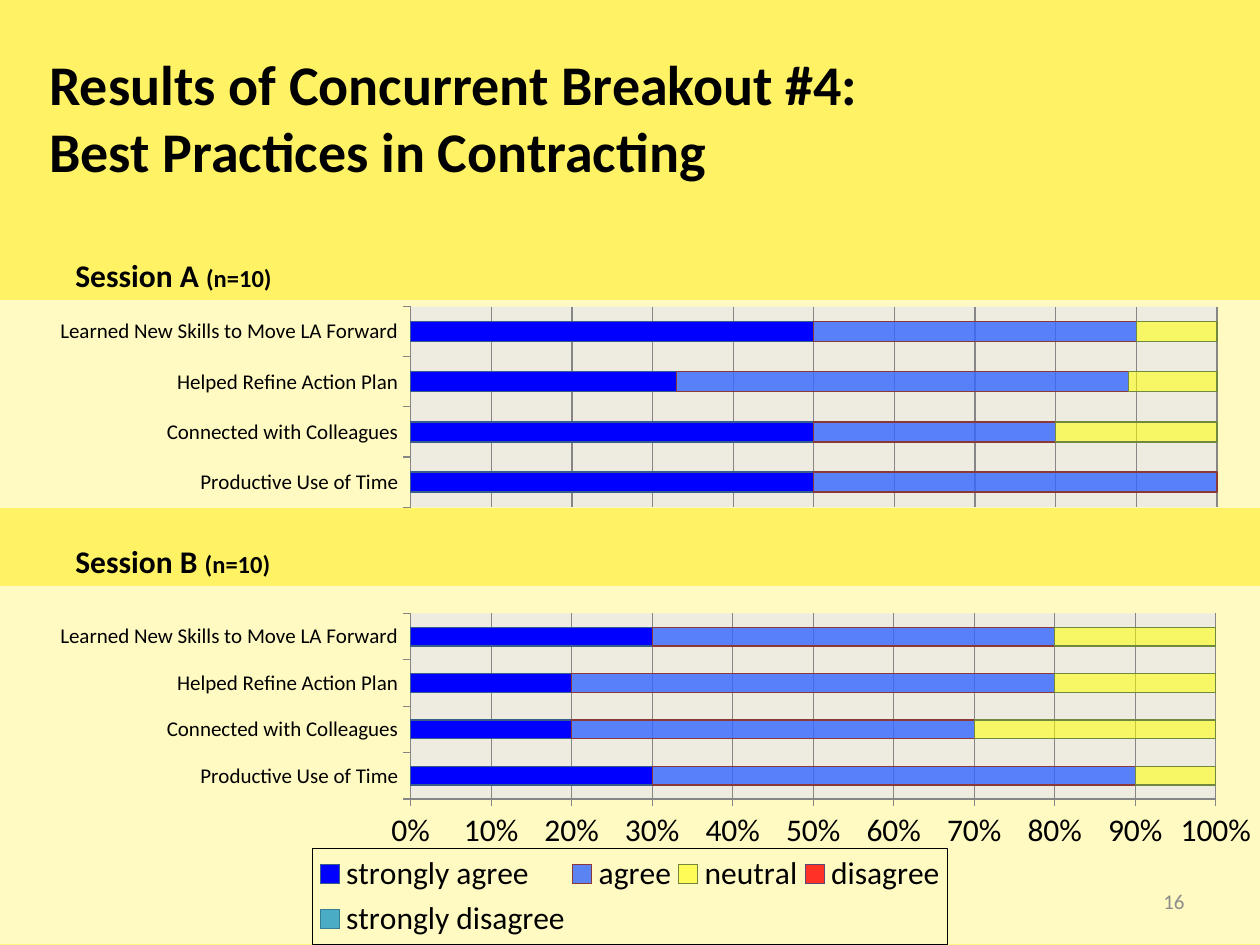
from dataclasses import dataclass

from lxml.etree import SubElement
from pptx import Presentation
from pptx.chart.chart import Chart
from pptx.chart.data import CategoryChartData
from pptx.dml.color import RGBColor
from pptx.enum.chart import XL_CHART_TYPE, XL_LEGEND_POSITION, XL_TICK_MARK
from pptx.enum.text import MSO_ANCHOR, PP_ALIGN
from pptx.oxml import parse_xml
from pptx.oxml.ns import nsdecls, qn
from pptx.util import Cm, Pt

FONT = "Calibri"
COLORS = {
    "background": "FFF365",
    "chart": "FFFAC1",
    "plot": "EEECE1",
    "text": "000000",
    "axis": "868686",
    "page number": "8C8C8C",
}
CATEGORIES = [
    "Productive Use of Time",
    "Connected with Colleagues",
    "Helped Refine Action Plan",
    "Learned New Skills to Move LA Forward",
]


@dataclass
class Box:
    left: float
    top: float
    width: float
    height: float

    def lengths(self) -> list:
        return [Cm(value) for value in (self.left, self.top, self.width, self.height)]


@dataclass
class Answer:
    name: str
    fill: str
    outline: str
    opacity: int = 100


@dataclass
class Session:
    label: str
    label_box: Box
    chart_box: Box
    plot_area: Box  # fractions of the chart
    values: list  # one row per answer
    shows_scale: bool


ANSWERS = [
    Answer("strongly agree", "0000FF", "385D8A"),
    Answer("agree", "3366FF", "8C3836", 80),
    Answer("neutral", "FFFF00", "71893F", 55),
    Answer("disagree", "FF0000", "5C4776", 80),
    Answer("strongly disagree", "4BACC6", "357D91"),
]
NONE = [0, 0, 0, 0]
SESSIONS = [
    Session("Session A ", Box(1.27, 5.03, 7.2, 1.02), Box(0, 6.05, 25.4, 4.19),
            Box(0.326, 0.031, 0.64, 0.966),
            [[50, 50, 33, 50], [50, 30, 56, 40], [0, 20, 11, 10], NONE, NONE], False),
    Session("Session B ", Box(1.27, 10.8, 7.2, 1.02), Box(0, 11.81, 25.4, 7.24),
            Box(0.326, 0.077, 0.639, 0.518),
            [[30, 20, 20, 30], [60, 50, 60, 50], [10, 30, 20, 20], NONE, NONE], True),
]


def color(name: str) -> RGBColor:
    return RGBColor.from_string(COLORS[name])


def add_run(paragraph, text: str, size: float, bold: bool = False, color_name: str = "text") -> None:
    run = paragraph.add_run()
    run.text = text
    run.font.name = FONT
    run.font.size = Pt(size)
    run.font.bold = bold
    run.font.color.rgb = color(color_name)


def add_text_box(slide, box: Box):
    frame = slide.shapes.add_textbox(*box.lengths()).text_frame
    frame.word_wrap = True
    return frame


def area_format(fill: str, line: str = ""):
    outline = f'<a:solidFill><a:srgbClr val="{line}"/></a:solidFill>' if line else "<a:noFill/>"
    return parse_xml(
        f'<c:spPr {nsdecls("c", "a")}><a:solidFill><a:srgbClr val="{fill}"/></a:solidFill>'
        f'<a:ln w="9525">{outline}</a:ln></c:spPr>')


def manual_layout(box: Box, inner: bool = False):
    target = '<c:layoutTarget val="inner"/>' if inner else ""
    return parse_xml(
        f'<c:layout {nsdecls("c")}><c:manualLayout>{target}'
        '<c:xMode val="edge"/><c:yMode val="edge"/>'
        f'<c:x val="{box.left}"/><c:y val="{box.top}"/>'
        f'<c:w val="{box.width}"/><c:h val="{box.height}"/></c:manualLayout></c:layout>')


def format_areas(chart: Chart, plot_area: Box) -> None:
    chart_element = chart.element.find(qn("c:chart"))
    chart_element.addnext(area_format(COLORS["chart"]))
    plot_element = chart_element.find(qn("c:plotArea"))
    for layout in plot_element.findall(qn("c:layout")):
        plot_element.remove(layout)
    plot_element.insert(0, manual_layout(plot_area, inner=True))
    plot_element.append(area_format(COLORS["plot"]))


def format_series(chart: Chart) -> None:
    plot = chart.plots[0]
    plot.gap_width = 150
    plot.overlap = 100
    plot.vary_by_categories = False
    for series, answer in zip(plot.series, ANSWERS):
        series.invert_if_negative = False
        series.format.fill.solid()
        series.format.fill.fore_color.rgb = RGBColor.from_string(answer.fill)
        series.format.line.color.rgb = RGBColor.from_string(answer.outline)
        series.format.line.width = Pt(0.75)
        if answer.opacity < 100:
            fill_color = series.format.fill.fore_color
            fill_element = series.format.element if hasattr(series.format, "element") else None
            shape_properties = series._element.find(qn("c:spPr"))
            tint = shape_properties.find(qn("a:solidFill")).find(qn("a:srgbClr"))
            SubElement(tint, qn("a:alpha")).set("val", str(answer.opacity * 1000))


def format_axes(chart: Chart, shows_scale: bool) -> None:
    for axis in (chart.category_axis, chart.value_axis):
        axis.major_tick_mark = XL_TICK_MARK.OUTSIDE
        axis.minor_tick_mark = XL_TICK_MARK.NONE
        axis.format.line.color.rgb = color("axis")
    chart.category_axis.tick_labels.font.size = Pt(12)
    scale = chart.value_axis
    scale.visible = shows_scale
    scale.minimum_scale, scale.maximum_scale, scale.major_unit = 0, 1, 0.1
    scale.tick_labels.number_format = "0%"
    scale.tick_labels.number_format_is_linked = False
    scale.has_major_gridlines = True
    scale.major_gridlines.format.line.color.rgb = color("axis")


def add_legend(chart: Chart) -> None:
    chart.has_legend = True
    chart.legend.position = XL_LEGEND_POSITION.BOTTOM
    chart.legend.include_in_layout = False
    legend = chart.element.find(qn("c:chart")).find(qn("c:legend"))
    for layout in legend.findall(qn("c:layout")):
        legend.remove(layout)
    legend.find(qn("c:legendPos")).addnext(manual_layout(Box(0.248, 0.732, 0.504, 0.268)))
    legend.find(qn("c:overlay")).addnext(area_format(COLORS["chart"], COLORS["text"]))


def add_session(slide, session: Session) -> None:
    data = CategoryChartData(number_format="0")
    data.categories = CATEGORIES
    for answer, values in zip(ANSWERS, session.values):
        data.add_series(answer.name, values)
    chart = slide.shapes.add_chart(
        XL_CHART_TYPE.BAR_STACKED_100, *session.chart_box.lengths(), data).chart
    chart.has_title = False
    chart.has_legend = False
    chart.font.name = FONT
    chart.font.size = Pt(18)
    chart.font.color.rgb = color("text")
    format_areas(chart, session.plot_area)
    format_series(chart)
    format_axes(chart, session.shows_scale)
    if session.shows_scale:
        add_legend(chart)

    paragraph = add_text_box(slide, session.label_box).paragraphs[0]
    add_run(paragraph, session.label, 18, bold=True)
    add_run(paragraph, "(n=10)", 14, bold=True)


def main() -> None:
    presentation = Presentation()
    presentation.slide_width, presentation.slide_height = Cm(25.4), Cm(19.05)
    slide = presentation.slides.add_slide(presentation.slide_layouts[5])
    slide.background.fill.solid()
    slide.background.fill.fore_color.rgb = color("background")

    # Title
    title = slide.shapes.title
    title.left, title.top, title.width, title.height = Box(0.74, 0.76, 24.31, 3.18).lengths()
    title.text_frame.vertical_anchor = MSO_ANCHOR.MIDDLE
    paragraph = title.text_frame.paragraphs[0]
    paragraph.alignment = PP_ALIGN.LEFT
    add_run(paragraph, "Results of Concurrent Breakout #4:", 32, bold=True)
    paragraph.add_line_break()
    add_run(paragraph, "Best Practices in Contracting", 32, bold=True)

    # Session charts and labels
    for session in SESSIONS:
        add_session(slide, session)

    # Page number
    frame = add_text_box(slide, Box(18.2, 17.65, 5.93, 1.02))
    frame.vertical_anchor = MSO_ANCHOR.MIDDLE
    frame.paragraphs[0].alignment = PP_ALIGN.RIGHT
    add_run(frame.paragraphs[0], "16", 12, color_name="page number")

    presentation.save("out.pptx")


if __name__ == "__main__":
    main()
